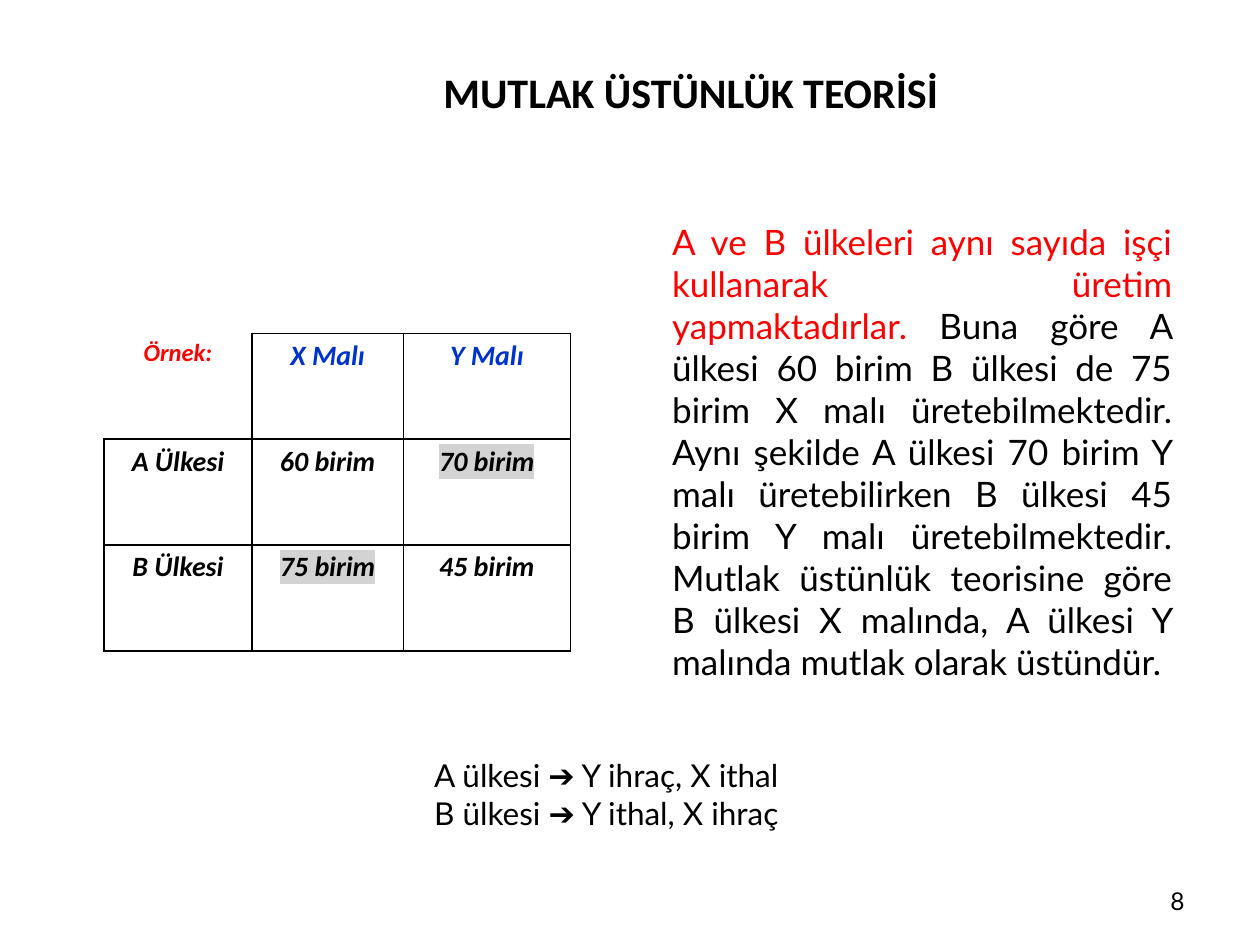
from dataclasses import dataclass

from lxml.etree import SubElement
from pptx import Presentation
from pptx.dml.color import RGBColor
from pptx.enum.text import MSO_ANCHOR as Anchor, PP_ALIGN as Align
from pptx.oxml.ns import qn
from pptx.util import Pt


@dataclass(frozen=True)
class Theme:
    heading_font: str = "Calibri"
    body_font: str = "Lato"
    black: str = "000000"
    red: str = "FF0000"
    blue: str = "0033CC"
    highlight: str = "D3D3D3"
    title_size: int = 24
    body_size: int = 20
    result_size: int = 18
    cell_size: int = 16
    small_size: int = 14
    border: float = 1


THEME = Theme()
OUTPUT = [
    ["Örnek:", "X Malı", "Y Malı"],
    ["A Ülkesi", "60 birim", "70 birim"],
    ["B Ülkesi", "75 birim", "45 birim"],
]
COLUMN_WIDTHS = [84.5, 86.5, 95.5]
ROW_HEIGHT = 60.5
ADVANTAGES = {(1, 2), (2, 1)}
PREMISE = "A ve B ülkeleri aynı sayıda işçi kullanarak üretim yapmaktadırlar."
ARGUMENT = (
    " Buna göre A ülkesi 60 birim B ülkesi de 75 birim X malı üretebilmektedir."
    " Aynı şekilde A ülkesi 70 birim Y malı üretebilirken B ülkesi 45 birim"
    " Y malı üretebilmektedir. Mutlak üstünlük teorisine göre B ülkesi X malında,"
    " A ülkesi Y malında mutlak olarak üstündür."
)
TRADE = ["A ülkesi ➔ Y ihraç, X ithal", "B ülkesi ➔ Y ithal, X ihraç"]


def style(font, name, size, color=THEME.black, bold=False, italic=False):
    font.name, font.size = name, Pt(size)
    font.bold, font.italic = bold, italic
    font.color.rgb = RGBColor.from_string(color)


def add_solid(parent, tag, color):
    fill = SubElement(parent, qn(tag))
    SubElement(fill, qn("a:srgbClr"), val=color)


def set_borders(cell, hidden=()):
    """Draw the four cell edges, leaving out those named in hidden."""
    properties = cell._tc.get_or_add_tcPr()
    for edge in ("L", "R", "T", "B"):
        line = SubElement(properties, qn(f"a:ln{edge}"), w=str(Pt(THEME.border)))
        if edge in hidden:
            SubElement(line, qn("a:noFill"))
        else:
            add_solid(line, "a:solidFill", THEME.black)


def add_text_frame(slide, left, top, width, height):
    frame = slide.shapes.add_textbox(Pt(left), Pt(top), Pt(width), Pt(height)).text_frame
    frame.word_wrap = True
    return frame


def set_title(slide, left, top, width, height):
    title = slide.shapes.title
    title.left, title.top, title.width, title.height = map(Pt, (left, top, width, height))
    frame = title.text_frame
    frame.text = "MUTLAK ÜSTÜNLÜK TEORİSİ"
    frame.vertical_anchor = Anchor.MIDDLE
    frame.margin_bottom = Pt(33)
    heading = frame.paragraphs[0]
    heading.alignment = Align.CENTER
    style(heading.font, THEME.heading_font, THEME.title_size, bold=True)


def fill_cell(cell, text, size, color, highlighted, hidden_edges):
    cell.text = text
    cell.margin_left = cell.margin_right = Pt(5)
    cell.margin_top = cell.margin_bottom = 0
    label = cell.text_frame.paragraphs[0]
    label.alignment = Align.CENTER
    label.line_spacing, label.space_after = 1.15, Pt(10)
    style(label.font, THEME.heading_font, size, color, bold=True, italic=True)
    if highlighted:
        add_solid(label.runs[0].font._element, "a:highlight", THEME.highlight)
    set_borders(cell, hidden_edges)
    cell.fill.background()


def add_output_table(slide, left, top):
    rows, columns = len(OUTPUT), len(COLUMN_WIDTHS)
    table = slide.shapes.add_table(
        rows, columns, Pt(left), Pt(top), Pt(sum(COLUMN_WIDTHS)), Pt(rows * ROW_HEIGHT)
    ).table
    table.first_row = table.horz_banding = False
    for column, width in zip(table.columns, COLUMN_WIDTHS):
        column.width = Pt(width)
    for r, texts in enumerate(OUTPUT):
        table.rows[r].height = Pt(ROW_HEIGHT)
        for c, text in enumerate(texts):
            corner = r == c == 0
            size = THEME.small_size if corner else THEME.cell_size
            color = THEME.red if corner else THEME.blue if r == 0 else THEME.black
            hidden = ("L", "T") if corner else ()
            fill_cell(table.cell(r, c), text, size, color, (r, c) in ADVANTAGES, hidden)


def add_explanation(slide, left, top, width, height):
    paragraph = add_text_frame(slide, left, top, width, height).paragraphs[0]
    paragraph.alignment = Align.JUSTIFY
    for text, color in ((PREMISE, THEME.red), (ARGUMENT, THEME.black)):
        run = paragraph.add_run()
        run.text = text
        style(run.font, THEME.body_font, THEME.body_size, color)


def add_trade_result(slide, left, top, width, height):
    frame = add_text_frame(slide, left, top, width, height)
    frame.text = "\n".join(TRADE)
    for country in frame.paragraphs:
        style(country.font, THEME.body_font, THEME.result_size)


def add_page_number(slide, left, top, width, height):
    frame = add_text_frame(slide, left, top, width, height)
    frame.text = "8"
    frame.vertical_anchor = Anchor.MIDDLE
    number = frame.paragraphs[0]
    number.alignment = Align.RIGHT
    style(number.font, THEME.body_font, THEME.small_size)


def main():
    deck = Presentation()
    deck.slide_width, deck.slide_height = Pt(720), Pt(540)
    slide = deck.slides.add_slide(deck.slide_layouts[5])
    set_title(slide, 88, 9.5, 613.5, 115)
    add_output_table(slide, 59.5, 190.5)
    add_page_number(slide, 516, 500.5, 168, 28.5)
    add_explanation(slide, 377, 122.5, 300, 273.5)
    add_trade_result(slide, 241, 428.5, 255.5, 51)
    deck.save("out.pptx")


if __name__ == "__main__":
    main()
